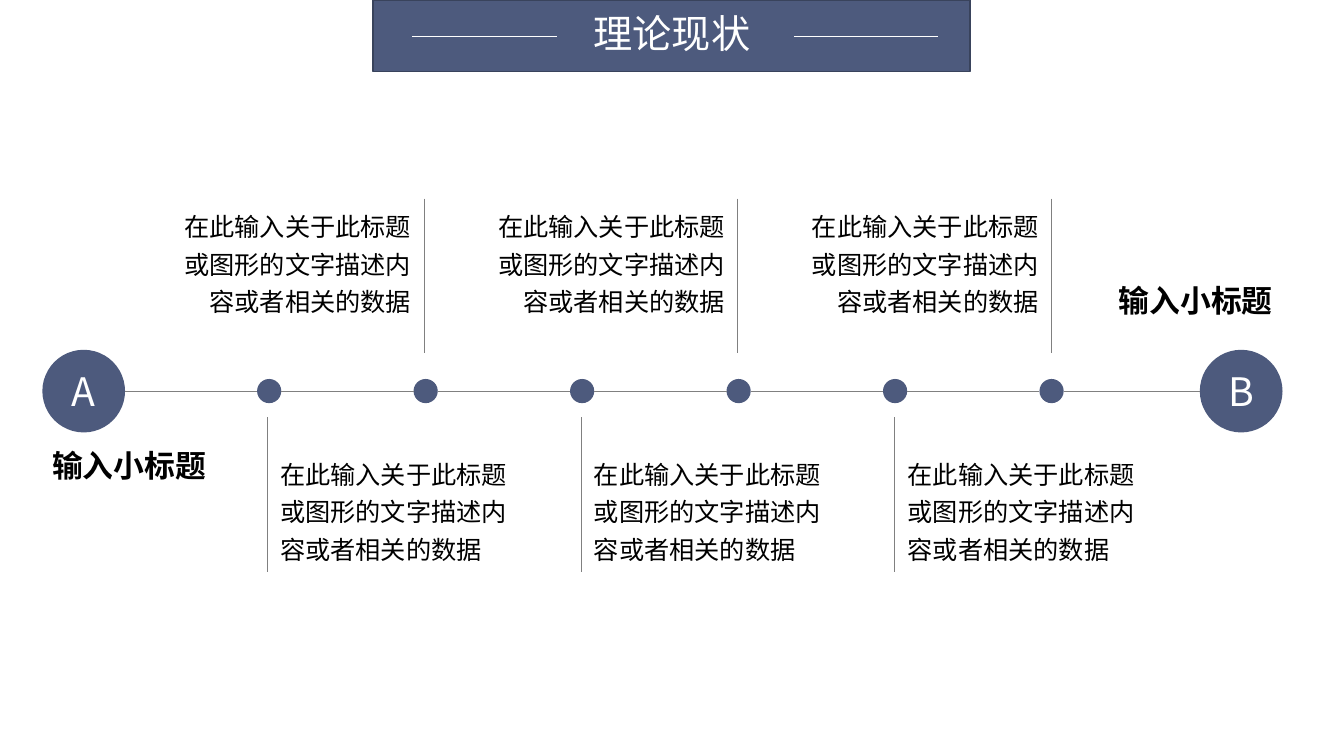
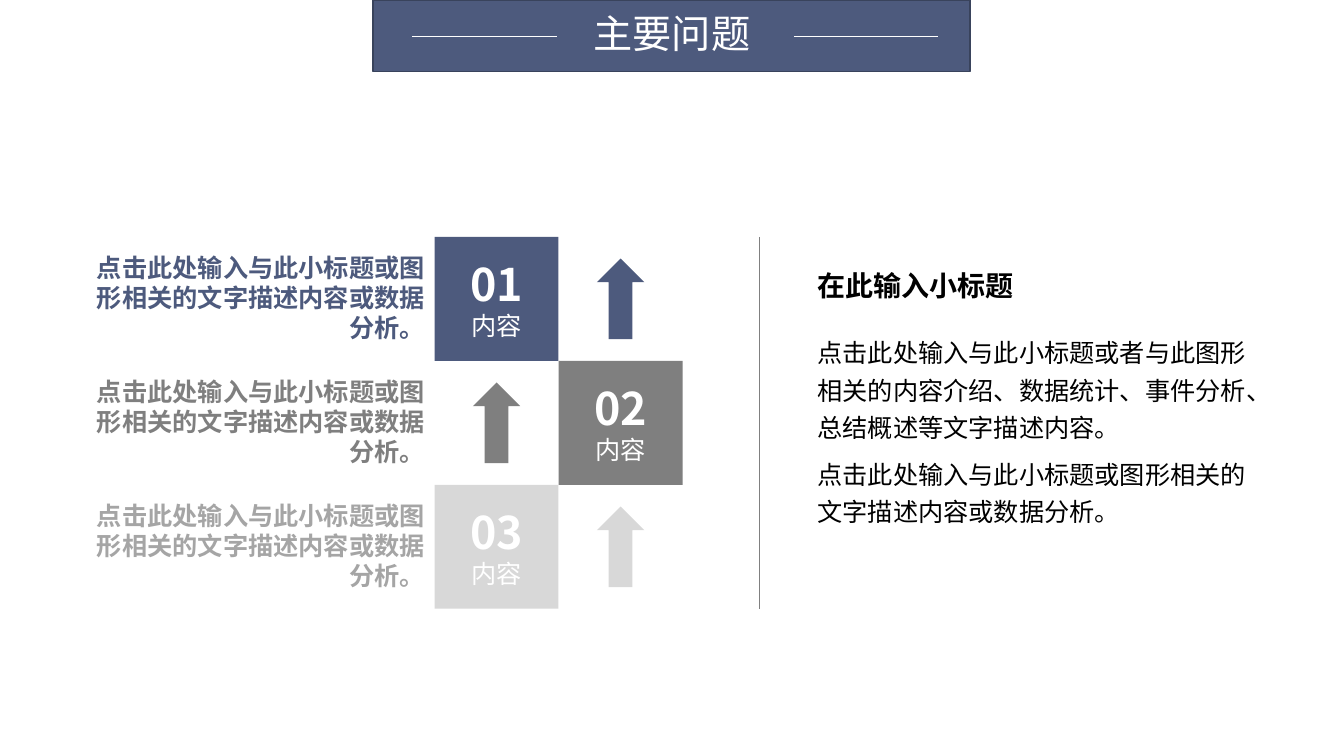
from dataclasses import dataclass

import pptx
import pptx.dml.color
import pptx.enum.shapes
import pptx.enum.text
import pptx.oxml.ns
import pptx.util
from lxml import etree
from pptx.util import Inches

ALIGN = pptx.enum.text.PP_ALIGN
ANCHOR = pptx.enum.text.MSO_ANCHOR
AUTO_SIZE = pptx.enum.text.MSO_AUTO_SIZE
SHAPE = pptx.enum.shapes.MSO_SHAPE


@dataclass(frozen=True)
class Theme:
    font: str = "Noto Sans CJK SC"
    navy: str = "4D5A7D"
    navy_edge: str = "39435C"
    gray: str = "7F7F7F"
    pale: str = "D8D8D8"
    pale_text: str = "A5A5A5"
    rule: str = "808080"
    white: str = "FFFFFF"
    black: str = "000000"
    number: int = 32
    title: int = 28
    label: int = 22
    heading: int = 20
    body: int = 18
    loose: float = 1.25


THEME = Theme()


def rgb(value):
    return pptx.dml.color.RGBColor.from_string(value)


def write(frame, text, size=THEME.body, color=THEME.black, bold=False,
          align=ALIGN.LEFT, spacing=None, before=0):
    """Add one formatted paragraph, filling the first one if it is empty."""
    para = frame.paragraphs[0] if not frame.text else frame.add_paragraph()
    para.alignment = align
    para.line_spacing = spacing
    para.space_before = pptx.util.Pt(before)
    span = para.add_run()
    span.text = text
    span.font.size = pptx.util.Pt(size)
    span.font.bold = bold
    span.font.color.rgb = rgb(color)
    span.font.name = THEME.font
    properties = span._r.get_or_add_rPr()
    etree.SubElement(properties, pptx.oxml.ns.qn("a:ea"), typeface=THEME.font)


class Builder:
    """Holds the deck, its style and the slide being drawn."""

    def __init__(self, theme):
        self.theme = theme
        self.deck = pptx.Presentation()
        self.deck.slide_width = Inches(13.33)
        self.deck.slide_height = Inches(7.5)
        self.layout = self.deck.slide_layouts.get_by_name("Title Only")
        self.slide = None

    def add_slide(self, title):
        self.slide = self.deck.slides.add_slide(self.layout)
        if len(self.deck.slides) == 1:
            self.style_layout()
        frame = self.slide.shapes.title.text_frame
        frame.word_wrap = False
        frame.auto_size = AUTO_SIZE.NONE
        frame.vertical_anchor = ANCHOR.MIDDLE
        write(frame, title, size=self.theme.title, color=self.theme.white,
              align=ALIGN.CENTER, spacing=0.9)

    def style_layout(self):
        """Move the title band into the layout, behind its title."""
        title = self.layout.placeholders[0]
        title.left, title.top = Inches(4.95), Inches(0.09)
        title.width, title.height = Inches(3.43), Inches(0.53)
        band = [
            self.shape(SHAPE.RECTANGLE, 3.7, 0, 5.92, 0.71, self.theme.navy,
                       edge=self.theme.navy_edge),
            self.line(4.09, 0.36, 5.52, 0.36, self.theme.white),
            self.line(7.88, 0.36, 9.3, 0.36, self.theme.white),
        ]
        for number, part in enumerate(band, start=101):
            part.element.xpath(".//p:cNvPr")[0].set("id", str(number))
            title.element.addprevious(part.element)

    def shape(self, kind, left, top, width, height, fill, edge=None):
        shape = self.slide.shapes.add_shape(
            kind, Inches(left), Inches(top), Inches(width), Inches(height))
        shape.shadow.inherit = False
        shape.fill.solid()
        shape.fill.fore_color.rgb = rgb(fill)
        if edge:
            shape.line.color.rgb = rgb(edge)
            shape.line.width = pptx.util.Pt(1)
        else:
            shape.line.fill.background()
        shape.text_frame.vertical_anchor = ANCHOR.MIDDLE
        return shape

    def line(self, x1, y1, x2, y2, color=THEME.rule):
        line = self.slide.shapes.add_connector(
            pptx.enum.shapes.MSO_CONNECTOR.STRAIGHT,
            Inches(x1), Inches(y1), Inches(x2), Inches(y2))
        line.line.color.rgb = rgb(color)
        line.line.width = pptx.util.Pt(0.5)
        etree.SubElement(line.element.spPr, pptx.oxml.ns.qn("a:effectLst"))
        return line

    def text(self, left, top, width, height, *texts, **style):
        """Add a text box with one paragraph for each text."""
        box = self.slide.shapes.add_textbox(
            Inches(left), Inches(top), Inches(width), Inches(height))
        box.text_frame.word_wrap = True
        box.text_frame.auto_size = AUTO_SIZE.SHAPE_TO_FIT_TEXT
        for text in texts:
            write(box.text_frame, text, **style)

    def end_point(self, letter, left, top, size):
        circle = self.shape(SHAPE.OVAL, left, top, size, size, self.theme.navy)
        circle.text_frame.word_wrap = False
        write(circle.text_frame, letter, size=self.theme.title,
              color=self.theme.white, align=ALIGN.CENTER)

    def tile(self, number, left, top, size, fill):
        frame = self.shape(SHAPE.RECTANGLE, left, top, size, size, fill).text_frame
        style = dict(color=self.theme.white, align=ALIGN.CENTER)
        write(frame, number, size=self.theme.number, bold=True, **style)
        write(frame, "内容", **style)


def build_timeline(page):
    theme = page.theme
    page.add_slide("理论现状")

    axis, circle, dot, count = 3.88, 0.82, 0.24, 6
    start, end = 0.42, 11.9
    page.end_point("A", start, axis - circle / 2, circle)
    page.end_point("B", end, axis - circle / 2, circle)

    first_dot, last_dot = 2.55, 10.31
    dot_step = (last_dot - first_dot) / (count - 1)
    dots = [first_dot + dot_step * index for index in range(count)]
    for left in dots:
        page.shape(SHAPE.OVAL, left, axis - dot / 2, dot, dot, theme.navy)
    segment_starts = [start + circle] + [left + dot for left in dots]
    for left, right in zip(segment_starts, dots + [end]):
        page.line(left, axis, right, axis)

    first_rule, last_rule = 2.65, 10.43
    rule_step = (last_rule - first_rule) / (count - 1)
    rule_length, note_width, note_height, gap = 1.53, 2.64, 1.24, 0.03
    note = "在此输入关于此标题或图形的文字描述内容或者相关的数据"
    for index in range(count):
        x = first_rule + rule_step * index
        if index % 2:
            rule_top = note_top = 1.97
            note_left, align = x - gap - note_width, ALIGN.RIGHT
        else:
            rule_top, note_top = 4.14, 4.43
            note_left, align = x + gap, ALIGN.LEFT
        page.line(x, rule_top, x, rule_top + rule_length)
        page.text(note_left, note_top, note_width, note_height, note,
                  align=align, spacing=theme.loose)

    for left, top, align in ((0.42, 4.29, ALIGN.LEFT), (10.79, 2.65, ALIGN.RIGHT)):
        page.text(left, top, 1.93, 0.52, "输入小标题", size=theme.label, bold=True,
                  align=align, spacing=theme.loose, before=6)


def build_problems(page):
    theme = page.theme
    page.add_slide("主要问题")

    tile, grid_left, grid_top = 1.23, 4.31, 2.35
    arrow_width, arrow_height = 0.47, 0.8
    caption = "点击此处输入与此小标题或图形相关的文字描述内容或数据分析。"
    rows = (
        ("01", theme.navy, theme.navy),
        ("02", theme.gray, theme.gray),
        ("03", theme.pale, theme.pale_text),
    )
    for index, (number, fill, caption_color) in enumerate(rows):
        top = grid_top + tile * index
        columns = [grid_left, grid_left + tile]
        tile_left, arrow_left = columns if index % 2 == 0 else columns[::-1]
        page.tile(number, tile_left, top, tile, fill)
        page.shape(SHAPE.UP_ARROW, arrow_left + (tile - arrow_width) / 2,
                   top + (tile - arrow_height) / 2, arrow_width, arrow_height, fill)
        page.text(0.76, top + 0.1, 3.55, 1.01, caption, color=caption_color,
                  bold=True, align=ALIGN.RIGHT, before=6)

    page.line(7.53, grid_top, 7.53, grid_top + tile * len(rows))
    page.text(8.01, 2.61, 4.51, 0.44, "在此输入小标题",
              size=theme.heading, bold=True, before=6)
    page.text(
        8.01, 3.22, 4.51, 2.08,
        "点击此处输入与此小标题或者与此图形相关的内容介绍、数据统计、事件分析、总结概述等文字描述内容。",
        caption, spacing=theme.loose, before=6)


def main():
    page = Builder(THEME)
    build_timeline(page)
    build_problems(page)
    page.deck.save("out.pptx")


if __name__ == "__main__":
    main()
